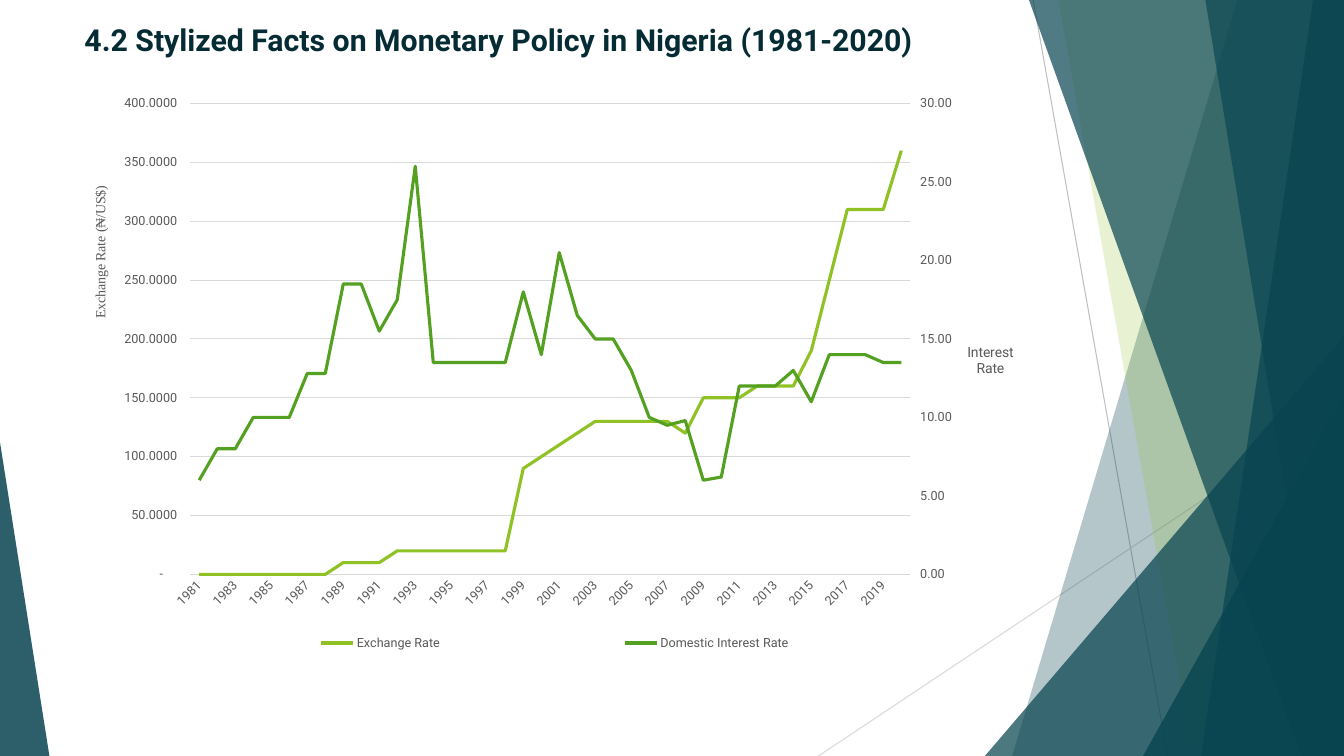
"""Build the slide on monetary policy in Nigeria, with a two-axis line chart."""
import copy

import pptx
import pptx.chart.axis
import pptx.chart.data
import pptx.dml.color
import pptx.enum.chart
import pptx.enum.shapes
import pptx.oxml.ns
import pptx.util

Pt = pptx.util.Pt
qn = pptx.oxml.ns.qn

THEME = {
    "font": "Roboto", "serif": "Times New Roman",
    "teal": "084450", "lime": "90C226", "green": "54A021",
    "ink": "052C34", "gray": "595959", "rule": "D9D9D9", "edge": "BFBFBF",
    "head": 21.6, "name": 10, "tick": 9, "curve": 2.25, "hair": 0.75,
}
WIDE, HIGH = 960, 540

TITLE = "4.2 Stylized Facts on Monetary Policy in Nigeria (1981-2020)"
TITLE_BOX = (53.3, 11.5, 676.8, 41.8)
CHART_BOX = (53.3, 53.3, 676.8, 422.6)
PLOT_BOX = (82.6, 20.7, 514.4, 336.4)
KEY_BOX = (47, 393.4, 592, 25.4)

YEARS = [str(year) for year in range(1981, 2021)]
SERIES = [
    ("Exchange Rate", "lime", [
        0, 0, 0, 0, 0, 0, 0, 0, 10, 10,
        10, 20, 20, 20, 20, 20, 20, 20, 90, 100,
        110, 120, 130, 130, 130, 130, 130, 120, 150, 150,
        150, 160, 160, 160, 190, 250, 310, 310, 310, 360]),
    ("Domestic Interest Rate", "green", [
        6, 8, 8, 10, 10, 10, 12.8, 12.8, 18.5, 18.5,
        15.5, 17.5, 26, 13.5, 13.5, 13.5, 13.5, 13.5, 18, 14,
        20.5, 16.5, 15, 15, 13, 10, 9.5, 9.8, 6, 6.2,
        12, 12, 12, 13, 11, 14, 14, 14, 13.5, 13.5]),
]
LEFT_FORM = r'_(* #,##0.0000_);_(* \(#,##0.0000\);_(* "-"??_);_(@_)'

LINES = [((738, 0, 834, HIGH), "edge"), ((WIDE, 290, 584.6, HIGH), "rule")]
BANDS = [
    ("quad", (884, 723), "teal", 30),
    ("quad", (756, 852), "lime", 20),
    ("tri", (703.5, 240, 256.5, 300, 1), "teal", 72),
    ("quad", (735, 929.5), "teal", 70),
    ("quad", (938, 858), "teal", 70),
    ("quad", (861, 949), "teal", 65),
    ("tri", (816.5, 283, 143.5, 257, 1), "teal", 80),
    ("tri", (0, 316, 35.3, 224, 0), "teal", 85),
]


def tint(name):
    return pptx.dml.color.RGBColor.from_string(THEME[name])


def style(font, size="tick", color="gray", face="font", bold=False):
    font.size, font.bold, font.name = Pt(THEME[size]), bold, THEME[face]
    font.color.rgb = tint(color)


def write(frame, text, **form):
    for row, line in enumerate(text.split("\n")):
        para = frame.add_paragraph() if row else frame.paragraphs[0]
        run = para.add_run()
        run.text = line
        style(run.font, **form)


def stroke(line, color, width="hair"):
    line.color.rgb, line.width = tint(color), Pt(THEME[width])


def draw_lines(shapes):
    for ends, color in LINES:
        line = shapes.add_connector(
            pptx.enum.shapes.MSO_CONNECTOR.STRAIGHT, *map(Pt, ends))
        stroke(line.line, color)
        props = line._element.spPr
        props.append(props.makeelement(qn("a:effectLst"), {}))


def draw_bands(shapes):
    for kind, spot, color, alpha in BANDS:
        if kind == "quad":
            top, low = spot
            pen = shapes.build_freeform(Pt(top), 0)
            ends = [(WIDE, 0), (WIDE, HIGH), (low, HIGH)]
            pen.add_line_segments([(Pt(x), Pt(y)) for x, y in ends])
            band = pen.convert_to_shape()
        else:
            *box, tip = spot
            band = shapes.add_shape(
                pptx.enum.shapes.MSO_SHAPE.ISOSCELES_TRIANGLE, *map(Pt, box))
            band.adjustments[0] = tip
        band.shadow.inherit = False
        band.line.fill.background()
        band.fill.solid()
        band.fill.fore_color.rgb = tint(color)
        paint = band._element.spPr.find(".//" + qn("a:srgbClr"))
        mark = paint.makeelement(qn("a:alpha"), {"val": str(alpha * 1000)})
        paint.append(mark)


def put(host, slot, spot, inner=False):
    old = host.find(qn("c:layout"))
    if old is not None:
        host.remove(old)
    tags = [("layoutTarget", "inner")] if inner else []
    tags += [(key + "Mode", "edge") for key in "xy"]
    sides = CHART_BOX[2:] * 2
    tags += [(key, size / side) for key, size, side in zip("xywh", spot, sides)]
    area = host.makeelement(qn("c:layout"), {})
    hand = area.makeelement(qn("c:manualLayout"), {})
    area.append(hand)
    for tag, value in tags:
        hand.append(hand.makeelement(qn("c:" + tag), {"val": str(value)}))
    host.insert(slot, area)


def scale(axis, top, step, form):
    axis.minimum_scale, axis.maximum_scale, axis.major_unit = 0, top, step
    axis.tick_labels.number_format = form
    axis.tick_labels.number_format_is_linked = False


def name_axis(axis, text, turn, spot, **form):
    title = axis.axis_title
    write(title.text_frame, text, size="name", **form)
    body = title._element.find(".//" + qn("a:bodyPr"))
    body.set("rot", str(turn * 60000))
    body.set("vert", "horz")
    put(title._element, 1, spot)


def split(plot, cat, val):
    main = plot.find(qn("c:lineChart"))
    side = copy.deepcopy(main)
    main.remove(main.findall(qn("c:ser"))[1])
    side.remove(side.find(qn("c:ser")))
    main.addnext(side)
    right, base = copy.deepcopy(val), copy.deepcopy(cat)
    val.addnext(right)
    right.addnext(base)
    for item, tag in zip(side.findall(qn("c:axId")), ("901", "902")):
        item.set("val", tag)
    for axis, own, other in ((base, "901", "902"), (right, "902", "901")):
        axis.find(qn("c:axId")).set("val", own)
        axis.find(qn("c:crossAx")).set("val", other)
    right.find(qn("c:axPos")).set("val", "r")
    right.find(qn("c:crosses")).set("val", "max")
    pptx.chart.axis.CategoryAxis(base).visible = False
    return pptx.chart.axis.ValueAxis(right)


def draw_chart(shapes):
    kinds = pptx.enum.chart
    data = pptx.chart.data.CategoryChartData()
    data.categories = YEARS
    for name, _, values in SERIES:
        data.add_series(name, values)
    chart = shapes.add_chart(
        kinds.XL_CHART_TYPE.LINE, *map(Pt, CHART_BOX), data).chart
    chart.has_title = False
    style(chart.font)
    for line, (_, color, _) in zip(chart.plots[0].series, SERIES):
        line.smooth = False
        stroke(line.format.line, color, "curve")
    chart.plots[0].vary_by_categories = False

    cat, val = chart.category_axis, chart.value_axis
    for axis in (cat, val):
        style(axis.tick_labels.font)
    cat.major_tick_mark = kinds.XL_TICK_MARK.NONE
    stroke(cat.format.line, "rule")
    cat._element.find(qn("c:txPr")).find(qn("a:bodyPr")).set("rot", "-2700000")
    skip = cat._element.makeelement(qn("c:tickLblSkip"), {"val": "2"})
    cat._element.find(qn("c:noMultiLvlLbl")).addprevious(skip)
    val.major_tick_mark = kinds.XL_TICK_MARK.OUTSIDE
    val.format.line.fill.background()
    val.has_major_gridlines = False

    plot = chart._chartSpace.chart.plotArea
    right = split(plot, cat._element, val._element)
    scale(val, 400, 50, LEFT_FORM)
    scale(right, 30, 5, "0.00")
    val.has_major_gridlines = True
    stroke(val.major_gridlines.format.line, "rule")
    name_axis(val, "Exchange Rate (₦/US$)", -90, (10, 77.6), face="serif")
    name_axis(cat, "Interest\nRate", 0, (635.5, 189.4))
    put(plot, 0, PLOT_BOX, inner=True)

    chart.has_legend = True
    chart.legend.position = kinds.XL_LEGEND_POSITION.BOTTOM
    chart.legend.include_in_layout = False
    style(chart.legend.font)
    put(chart.legend._element, 1, KEY_BOX)


def main():
    deck = pptx.Presentation()
    deck.slide_width, deck.slide_height = Pt(WIDE), Pt(HIGH)
    shapes = deck.slides.add_slide(deck.slide_layouts[6]).shapes
    draw_lines(shapes)
    draw_bands(shapes)
    frame = shapes.add_textbox(*map(Pt, TITLE_BOX)).text_frame
    frame.word_wrap = True
    write(frame, TITLE, size="head", color="ink", bold=True)
    draw_chart(shapes)
    deck.save("out.pptx")


if __name__ == "__main__":
    main()
